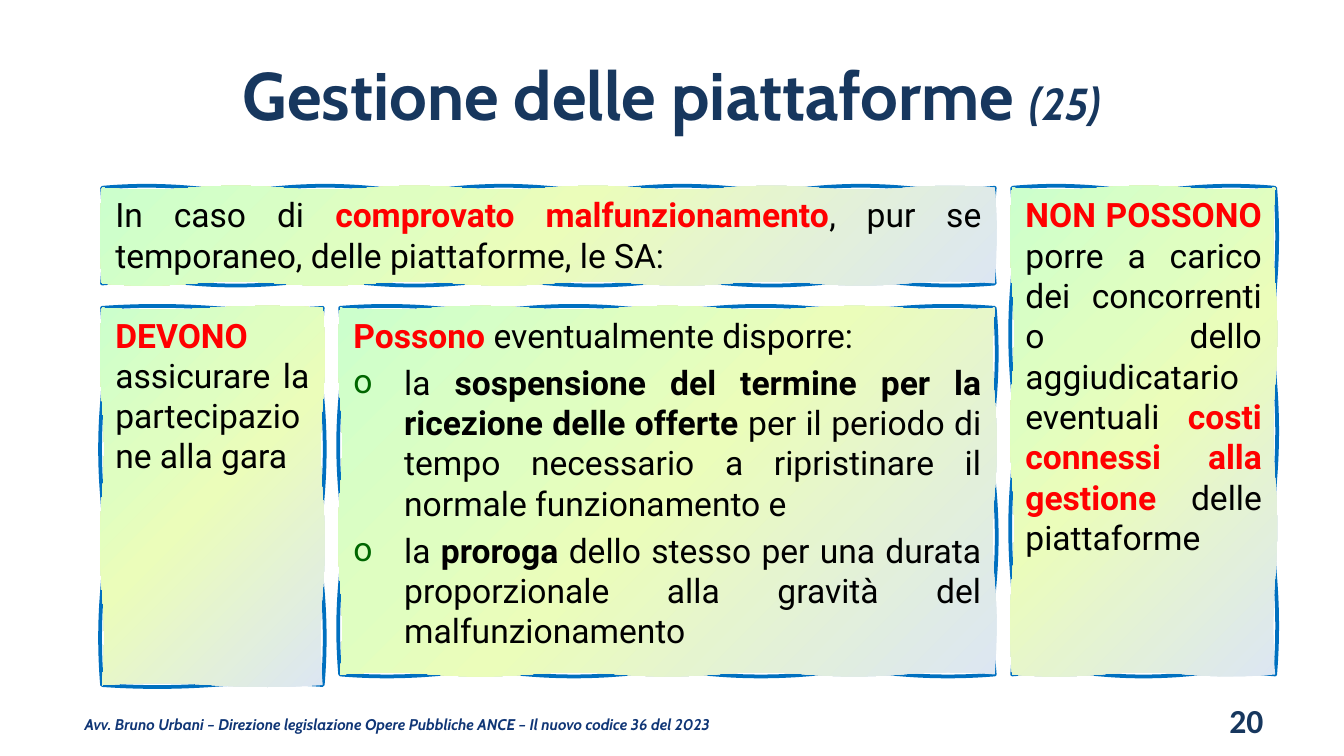
from copy import deepcopy

from lxml.etree import SubElement
from pptx import Presentation
from pptx.dml.color import RGBColor
from pptx.enum.text import MSO_ANCHOR, PP_ALIGN
from pptx.oxml.ns import qn
from pptx.util import Cm, Pt

NAVY = RGBColor(0x17, 0x37, 0x5E)
FOOTER_BLUE = RGBColor(0x10, 0x36, 0x76)
OUTLINE_BLUE = RGBColor(0x00, 0x70, 0xC0)
RED = RGBColor(0xFF, 0x00, 0x00)
BLACK = RGBColor(0x00, 0x00, 0x00)
BULLET_GREEN = RGBColor(0x00, 0x66, 0x00)
GRADIENT = [
    (0, RGBColor(0xDC, 0xE6, 0xF2)),
    (50, RGBColor(0xEB, 0xFD, 0xBA)),
    (69, RGBColor(0xDF, 0xFE, 0xC1)),
    (100, RGBColor(0xCC, 0xFF, 0xCC)),
]

# Run formats
BODY = {"name": "Roboto", "size": Pt(18), "bold": False, "color": BLACK}
STRONG = {**BODY, "bold": True}
ALERT = {**STRONG, "color": RED}
TITLE = {"name": "Cabin", "size": Pt(36), "bold": True, "color": NAVY}
TITLE_COUNT = {**TITLE, "size": Pt(24), "italic": True}
FOOTER = {"name": "Cabin", "size": Pt(8.3), "bold": True, "italic": True,
          "color": FOOTER_BLUE}
PAGE = {"name": "Calibri", "size": Pt(18), "bold": True, "color": NAVY}

# Content: each paragraph is a list of (words, format)
title_runs = [("Gestione delle piattaforme ", TITLE), ("(25)", TITLE_COUNT)]
footer_runs = [("Avv. Bruno Urbani – Direzione legislazione Opere Pubbliche "
                "ANCE – Il nuovo codice 36 del 2023", FOOTER)]
page_runs = [("20", PAGE)]

premise = [[("In caso di ", BODY), ("comprovato malfunzionamento", ALERT),
            (", pur se temporaneo, delle piattaforme, le SA:", BODY)]]
duty = [[("DEVONO", ALERT),
         (" assicurare la partecipazione alla gara", BODY)]]
options = [
    [("Possono ", ALERT), ("eventualmente disporre:", BODY)],
    [("la ", BODY),
     ("sospensione del termine per la ricezione delle offerte ", STRONG),
     ("per il periodo di tempo necessario a ripristinare il normale "
      "funzionamento e", BODY)],
    [("la ", BODY), ("proroga ", STRONG),
     ("dello stesso per una durata proporzionale alla gravità del "
      "malfunzionamento", BODY)],
]
ban = [[("NON POSSONO ", ALERT),
        ("porre a carico dei concorrenti o dello aggiudicatario eventuali ",
         BODY),
        ("costi connessi alla gestione ", ALERT),
        ("delle piattaforme", BODY)]]

# Panel grid, in cm
LEFT, TOP, COLUMN_GAP, ROW_GAP = 1.93, 3.55, 0.33, 0.46
DUTY_W, OPTIONS_W, BAN_W = 4.17, 12.37, 4.97
PREMISE_H, OPTIONS_H, DUTY_H = 1.81, 6.93, 7.13
options_left = LEFT + DUTY_W + COLUMN_GAP
ban_left = options_left + OPTIONS_W + COLUMN_GAP
lower_top = TOP + PREMISE_H + ROW_GAP
panels = [
    (duty, LEFT, lower_top, DUTY_W, DUTY_H),
    (options, options_left, lower_top, OPTIONS_W, OPTIONS_H),
    (ban, ban_left, TOP, BAN_W, PREMISE_H + ROW_GAP + OPTIONS_H),
    (premise, LEFT, TOP, DUTY_W + COLUMN_GAP + OPTIONS_W, PREMISE_H),
]
RIPPLE = Cm(0.05)  # how far a hand-drawn edge strays
RIPPLE_LENGTH = 1.75


def add_runs(paragraph, runs):
    for words, style in runs:
        run = paragraph.add_run()
        run.text = words
        for key, value in style.items():
            if key == "color":
                run.font.color.rgb = value
            else:
                setattr(run.font, key, value)


def add_bullet(paragraph):
    properties = paragraph._p.get_or_add_pPr()
    properties.set("marL", str(Cm(0.96)))
    properties.set("indent", str(-Cm(0.96)))
    color = SubElement(properties, qn("a:buClr"))
    SubElement(color, qn("a:srgbClr"), val=str(BULLET_GREEN))
    SubElement(properties, qn("a:buFont"), typeface="Roboto")
    SubElement(properties, qn("a:buChar"), char="o")


def edge_points(left, top, width, height):
    """Evenly spaced points around a rectangle, back to the start."""
    right, bottom = left + width, top + height
    corners = [(left, top), (right, top), (right, bottom), (left, bottom)]
    points = []
    for (x1, y1), (x2, y2) in zip(corners, corners[1:] + corners[:1]):
        steps = max(1, round((abs(x2 - x1) + abs(y2 - y1)) / RIPPLE_LENGTH))
        points += [(Cm(x1 + (x2 - x1) * step / steps),
                    Cm(y1 + (y2 - y1) * step / steps))
                   for step in range(steps)]
    return points + points[:1]


def ripple(outline, side):
    """Turn the straight segments into curves bent to alternate sides."""
    x1, y1 = [int(outline[0][0].get(axis)) for axis in "xy"]
    for segment in outline.findall(qn("a:lnTo")):
        x2, y2 = [int(segment[0].get(axis)) for axis in "xy"]
        horizontal = abs(x2 - x1) > abs(y2 - y1)
        bend_x, bend_y = (0, side * RIPPLE) if horizontal else (side * RIPPLE, 0)
        curve = outline.makeelement(qn("a:cubicBezTo"))
        for part, bend in ((1, 1), (2, 1), (3, 0)):
            SubElement(curve, qn("a:pt"),
                       x=str(x1 + (x2 - x1) * part // 3 + bend_x * bend),
                       y=str(y1 + (y2 - y1) * part // 3 + bend_y * bend))
        outline.replace(segment, curve)
        x1, y1, side = x2, y2, -side


def add_panel(shapes, paragraphs, left, top, width, height):
    points = edge_points(left, top, width, height)
    builder = shapes.build_freeform(*points[0])
    builder.add_line_segments(points[1:], close=True)
    panel = builder.convert_to_shape()
    panel.shadow.inherit = False
    panel.line.color.rgb = OUTLINE_BLUE
    panel.line.width = Pt(2)

    # A stroked outline under a filled one that ripples the other way
    stroke = panel._element.spPr.find(".//" + qn("a:path"))
    filling = deepcopy(stroke)
    stroke.addnext(filling)
    stroke.set("fill", "none")
    filling.set("stroke", "0")
    ripple(stroke, -1)
    ripple(filling, 1)

    # Four-stop gradient from bottom right to top left
    panel.fill.gradient()
    panel.fill.gradient_angle = 135
    stops = panel._element.spPr.find(".//" + qn("a:gsLst"))
    stops.clear()
    for position, color in GRADIENT:
        stop = SubElement(stops, qn("a:gs"), pos=str(position * 1000))
        SubElement(stop, qn("a:srgbClr"), val=str(color))

    frame = panel.text_frame
    frame.word_wrap = True
    frame.vertical_anchor = MSO_ANCHOR.TOP
    for index, runs in enumerate(paragraphs):
        paragraph = frame.add_paragraph() if index else frame.paragraphs[0]
        if index:
            add_bullet(paragraph)
            paragraph.space_before = Pt(3.6)
        paragraph.alignment = PP_ALIGN.JUSTIFY
        add_runs(paragraph, runs)


def place_line(box, runs, alignment):
    frame = box.text_frame
    frame.word_wrap = True
    frame.vertical_anchor = MSO_ANCHOR.MIDDLE
    frame.paragraphs[0].alignment = alignment
    add_runs(frame.paragraphs[0], runs)
    return frame


def main():
    deck = Presentation()
    deck.slide_width, deck.slide_height = Cm(25.4), Cm(14.29)
    slide = deck.slides.add_slide(deck.slide_layouts[5])
    shapes = slide.shapes

    # Title
    title = shapes.title
    title.left, title.top = Cm(1.27), Cm(0.58)
    title.width, title.height = Cm(22.86), Cm(2.39)
    place_line(title, title_runs, PP_ALIGN.CENTER)

    # Footer and page number
    footer = shapes.add_textbox(Cm(1.42), Cm(13.39), Cm(12.47), Cm(0.61))
    footer_frame = place_line(footer, footer_runs, PP_ALIGN.LEFT)
    footer_frame.margin_left = footer_frame.margin_right = Cm(0.18)
    footer_frame.margin_top = footer_frame.margin_bottom = Cm(0.1)
    page = shapes.add_textbox(Cm(18.21), Cm(13.24), Cm(5.92), Cm(0.76))
    place_line(page, page_runs, PP_ALIGN.RIGHT)

    # Panels
    for panel in panels:
        add_panel(shapes, *panel)

    deck.save("out.pptx")


if __name__ == "__main__":
    main()
